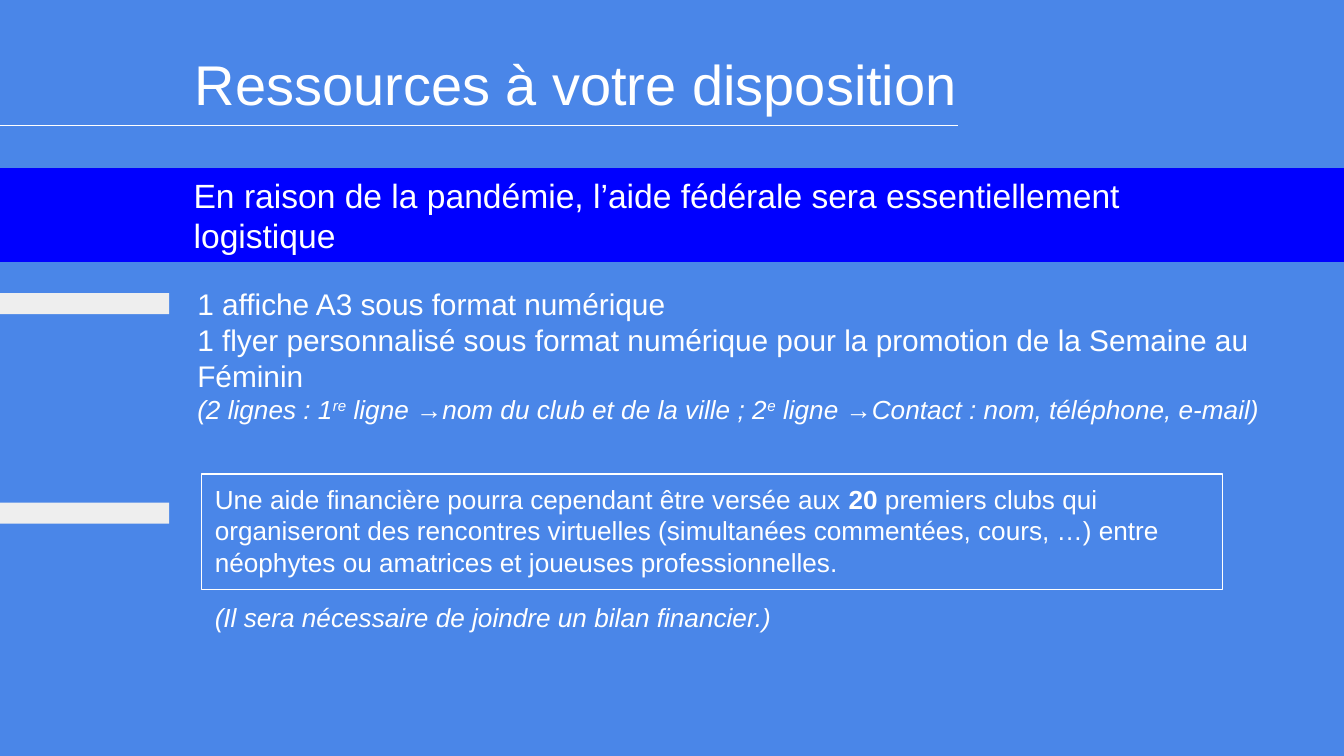
from dataclasses import dataclass

from lxml import etree
from pptx import Presentation
from pptx.dml.color import RGBColor
from pptx.enum import shapes, text
from pptx.oxml import ns
from pptx.util import Cm, Pt


@dataclass(frozen=True)
class Theme:
    font: str = "Arial"
    background: str = "4A86E8"
    band: str = "0000FF"
    marker: str = "EEEEEE"
    ink: str = "FFFFFF"
    title: float = 30
    lead: float = 18
    body: float = 16
    detail: float = 14
    line: float = 0.75
    inset: float = 0.25


class Slide:
    def __init__(self, deck, theme):
        self.theme = theme
        self.page = deck.slides.add_slide(deck.slide_layouts[6])
        fill = self.page.background.fill
        fill.solid()
        fill.fore_color.rgb = RGBColor.from_string(theme.background)

    def set_text(self, box, paras):
        """Fill a box with (size, spans, options) paragraphs; a span is (words, style)."""
        frame = box.text_frame
        frame.word_wrap = True
        frame.margin_left = frame.margin_right = Cm(self.theme.inset)
        frame.margin_top = frame.margin_bottom = Cm(self.theme.inset)
        for index, (size, spans, options) in enumerate(paras):
            para = frame.add_paragraph() if index else frame.paragraphs[0]
            para.alignment = text.PP_ALIGN.LEFT
            para.space_before = Pt(options.get("before", 0))
            para.font.name = self.theme.font
            para.font.size = Pt(size)
            para.font.italic = options.get("italic", False)
            para.font.color.rgb = RGBColor.from_string(self.theme.ink)
            for words, style in spans:
                span = para.add_run()
                span.text = words
                if style == "bold":
                    span.font.bold = True
                elif style == "super":
                    span._r.get_or_add_rPr().set("baseline", "30000")

    def text_box(self, left, top, width, height, paras):
        box = self.page.shapes.add_textbox(Cm(left), Cm(top), Cm(width), Cm(height))
        self.set_text(box, paras)

    def rectangle(self, left, top, width, height, fill=None, line=None):
        box = self.page.shapes.add_shape(
            shapes.MSO_SHAPE.RECTANGLE, Cm(left), Cm(top), Cm(width), Cm(height))
        box.shadow.inherit = False
        if fill:
            box.fill.solid()
            box.fill.fore_color.rgb = RGBColor.from_string(fill)
        else:
            box.fill.background()
        if line:
            box.line.color.rgb = RGBColor.from_string(line)
            box.line.width = Pt(self.theme.line)
        else:
            box.line.fill.background()
        return box

    def rule(self, left, right, top):
        rule = self.page.shapes.add_connector(
            shapes.MSO_CONNECTOR.STRAIGHT, Cm(left), Cm(top), Cm(right), Cm(top))
        rule.line.color.rgb = RGBColor.from_string(self.theme.ink)
        rule.line.width = Pt(self.theme.line)
        etree.SubElement(rule._element.spPr, ns.qn("a:effectLst"))


def plain(size, words, **options):
    """Describe a paragraph made of a single span."""
    return size, [(words, None)], options


def main():
    deck = Presentation()
    deck.slide_width, deck.slide_height = Cm(25.4), Cm(14.29)
    theme = Theme()
    slide = Slide(deck, theme)

    slide.text_box(3.43, 0.69, 21.46, 2.57,
                   [plain(theme.title, "Ressources à votre disposition")])
    slide.rule(0, 18.11, 2.37)

    band = slide.rectangle(0, 3.18, 25.4, 1.77, fill=theme.band)
    slide.set_text(band, [
        plain(theme.lead, "En raison de la pandémie, l’aide fédérale sera essentiellement"),
        plain(theme.lead, "logistique"),
    ])
    band.text_frame.margin_left = Cm(3.66)
    band.text_frame.vertical_anchor = text.MSO_ANCHOR.MIDDLE

    for top in (5.54, 9.5):
        slide.rectangle(0, top, 3.2, 0.4, fill=theme.marker)

    slide.text_box(3.48, 5.16, 21.18, 3.18, [
        plain(theme.body, "1 affiche A3 sous format numérique"),
        plain(theme.body, "1 flyer personnalisé sous format numérique pour la promotion "
                          "de la Semaine au Féminin"),
        (theme.detail, [
            ("(2 lignes : 1", None), ("re", "super"),
            (" ligne →nom du club et de la ville ; 2", None), ("e", "super"),
            (" ligne →Contact : nom, téléphone, e-mail)", None),
        ], {"italic": True}),
    ])

    slide.text_box(3.81, 8.89, 20.85, 3.25, [
        (theme.detail, [
            ("Une aide financière pourra cependant être versée aux ", None),
            ("20", "bold"), (" premiers clubs qui", None),
        ], {}),
        plain(theme.detail, "organiseront des rencontres virtuelles "
                            "(simultanées commentées, cours, …) entre"),
        plain(theme.detail, "néophytes ou amatrices et joueuses professionnelles."),
        plain(theme.detail, "(Il sera nécessaire de joindre un bilan financier.)",
              italic=True, before=12.5),
    ])
    slide.rectangle(3.81, 8.96, 19.3, 2.18, line=theme.ink)

    deck.save("out.pptx")


if __name__ == "__main__":
    main()
